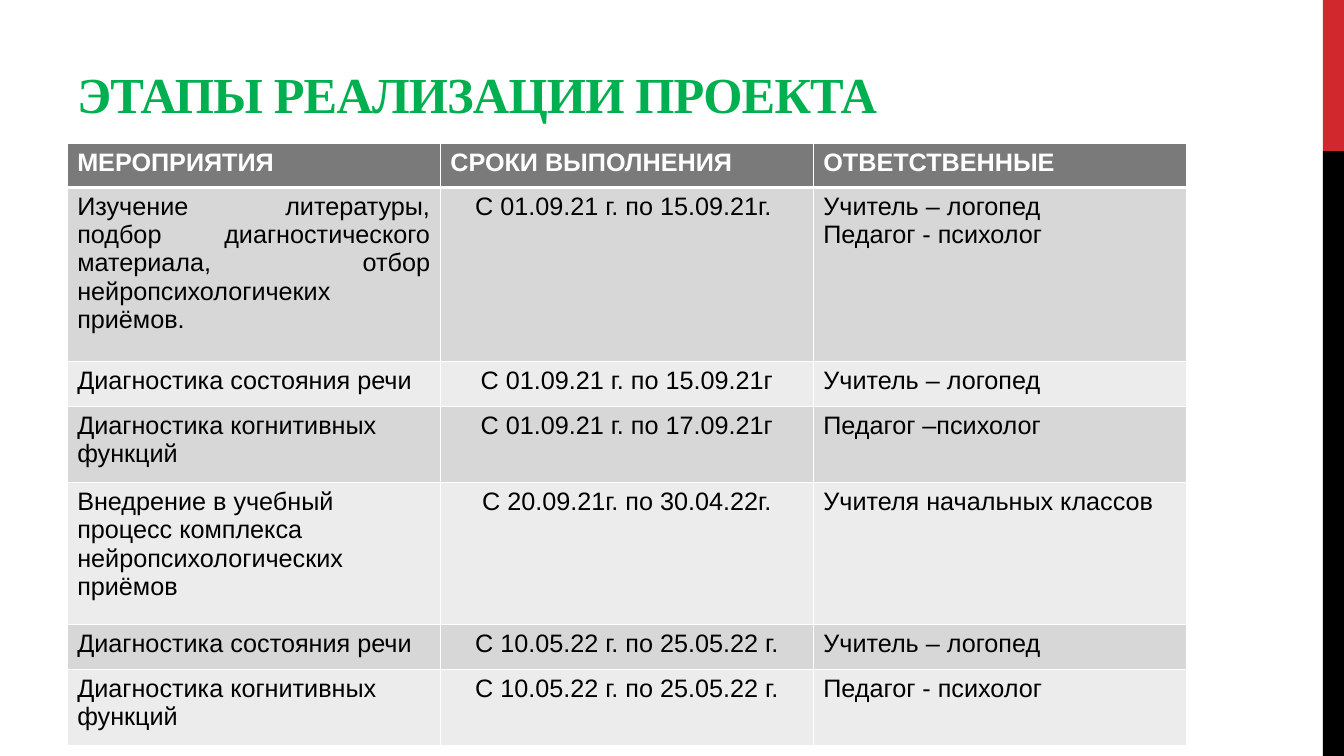
from lxml import etree
from pptx import Presentation
from pptx.dml.color import RGBColor
from pptx.enum.shapes import MSO_SHAPE
from pptx.enum.text import MSO_ANCHOR, PP_ALIGN
from pptx.oxml.ns import qn
from pptx.util import Inches, Pt

RECTANGLE = MSO_SHAPE.RECTANGLE
BOTTOM = MSO_ANCHOR.BOTTOM
LEFT, CENTER, JUSTIFY = PP_ALIGN.LEFT, PP_ALIGN.CENTER, PP_ALIGN.JUSTIFY

WIDTH, HEIGHT = 13.33, 7.5
MARGIN = WIDTH * 0.05
STRIPE_LEFT = 13.12
COLUMN_WIDTH = 3.7
ROW_HEIGHTS = [0.44, 1.73, 0.44, 0.76, 1.41, 0.44, 0.76]

RED, BLACK, WHITE, GREEN = "D1282E", "000000", "FFFFFF", "00B050"
HEADER_FILL, BAND_FILLS = "7A7A7A", ("ECECEC", "D7D7D7")

TITLE_FONT = {"name": "Times New Roman", "size": Pt(36), "bold": True}
HEADER_FONT = {"name": "Arial", "size": Pt(18), "bold": True}
BODY_FONT = {"name": "Arial", "size": Pt(18), "bold": False}

STAGES = [
    ("МЕРОПРИЯТИЯ", "СРОКИ ВЫПОЛНЕНИЯ", "ОТВЕТСТВЕННЫЕ"),
    ("Изучение литературы, подбор диагностического материала, отбор "
     "нейропсихологичеких приёмов.",
     "С 01.09.21 г. по 15.09.21г. ", "Учитель – логопед\nПедагог - психолог"),
    ("Диагностика состояния речи", "С 01.09.21 г. по 15.09.21г",
     "Учитель – логопед"),
    ("Диагностика когнитивных функций", "С 01.09.21 г. по 17.09.21г",
     "Педагог –психолог"),
    ("Внедрение в учебный процесс комплекса нейропсихологических приёмов",
     "С 20.09.21г. по 30.04.22г.", "Учителя начальных классов"),
    ("Диагностика состояния речи", "С 10.05.22 г. по 25.05.22 г.",
     "Учитель – логопед"),
    ("Диагностика когнитивных функций", "С 10.05.22 г. по 25.05.22 г.",
     "Педагог - психолог"),
]


def color(value):
    return RGBColor.from_string(value)


def write(frame, text, font, ink, align=LEFT):
    frame.text = text
    for para in frame.paragraphs:
        para.alignment = align
        for span in para.runs:
            for name, value in font.items():
                setattr(span.font, name, value)
            span.font.color.rgb = color(ink)


def add_stripe(page, top, height, fill):
    stripe = page.shapes.add_shape(
        RECTANGLE, Inches(STRIPE_LEFT), Inches(top),
        Inches(WIDTH - STRIPE_LEFT), Inches(height))
    stripe.shadow.inherit = False
    stripe.fill.solid()
    stripe.fill.fore_color.rgb = color(fill)
    stripe.line.fill.background()


def add_title(page, text):
    box = page.shapes.add_textbox(
        Inches(MARGIN), Inches(0.17), Inches(8.44), Inches(1.11))
    frame = box.text_frame
    frame.word_wrap = True
    frame.vertical_anchor = BOTTOM
    write(frame, text, TITLE_FONT, GREEN)
    # Slightly tightened letter spacing, in hundredths of a point
    frame.paragraphs[0].runs[0].font._element.set("spc", "-60")


def set_borders(cell, widths):
    properties = cell._tc.get_or_add_tcPr()
    for index, (side, width) in enumerate(widths.items()):
        line = etree.Element(qn(f"a:ln{side}"), w=str(Pt(width)))
        fill = etree.SubElement(line, qn("a:solidFill"))
        etree.SubElement(fill, qn("a:srgbClr"), val=WHITE)
        properties.insert(index, line)


def format_cell(cell, text, row, column):
    header = row == 0
    cell.fill.solid()
    cell.fill.fore_color.rgb = color(HEADER_FILL if header else BAND_FILLS[row % 2])
    if header:
        write(cell.text_frame, text, HEADER_FONT, WHITE)
    else:
        first = JUSTIFY if row == 1 else LEFT
        write(cell.text_frame, text, BODY_FONT, BLACK, (first, CENTER, LEFT)[column])
    # The rule under the header is thicker than the others
    set_borders(cell, {"L": 1, "R": 1, "T": 3 if row == 1 else 1,
                       "B": 3 if header else 1})


def add_stage_table(page):
    columns = len(STAGES[0])
    table = page.shapes.add_table(
        len(STAGES), columns, Inches(MARGIN), Inches(1.42),
        Inches(COLUMN_WIDTH * columns), Inches(sum(ROW_HEIGHTS))).table
    for column in table.columns:
        column.width = Inches(COLUMN_WIDTH)
    for row, (height, texts) in enumerate(zip(ROW_HEIGHTS, STAGES)):
        table.rows[row].height = Inches(height)
        for column, text in enumerate(texts):
            format_cell(table.cell(row, column), text, row, column)


def main():
    deck = Presentation()
    deck.slide_width, deck.slide_height = Inches(WIDTH), Inches(HEIGHT)
    page = deck.slides.add_slide(deck.slide_layouts[6])

    # Side stripe: one fifth red, the rest black
    add_stripe(page, 0, HEIGHT / 5, RED)
    add_stripe(page, HEIGHT / 5, HEIGHT * 4 / 5, BLACK)

    # Heading and schedule
    add_title(page, "ЭТАПЫ РЕАЛИЗАЦИИ ПРОЕКТА")
    add_stage_table(page)

    deck.save("out.pptx")


if __name__ == "__main__":
    main()
